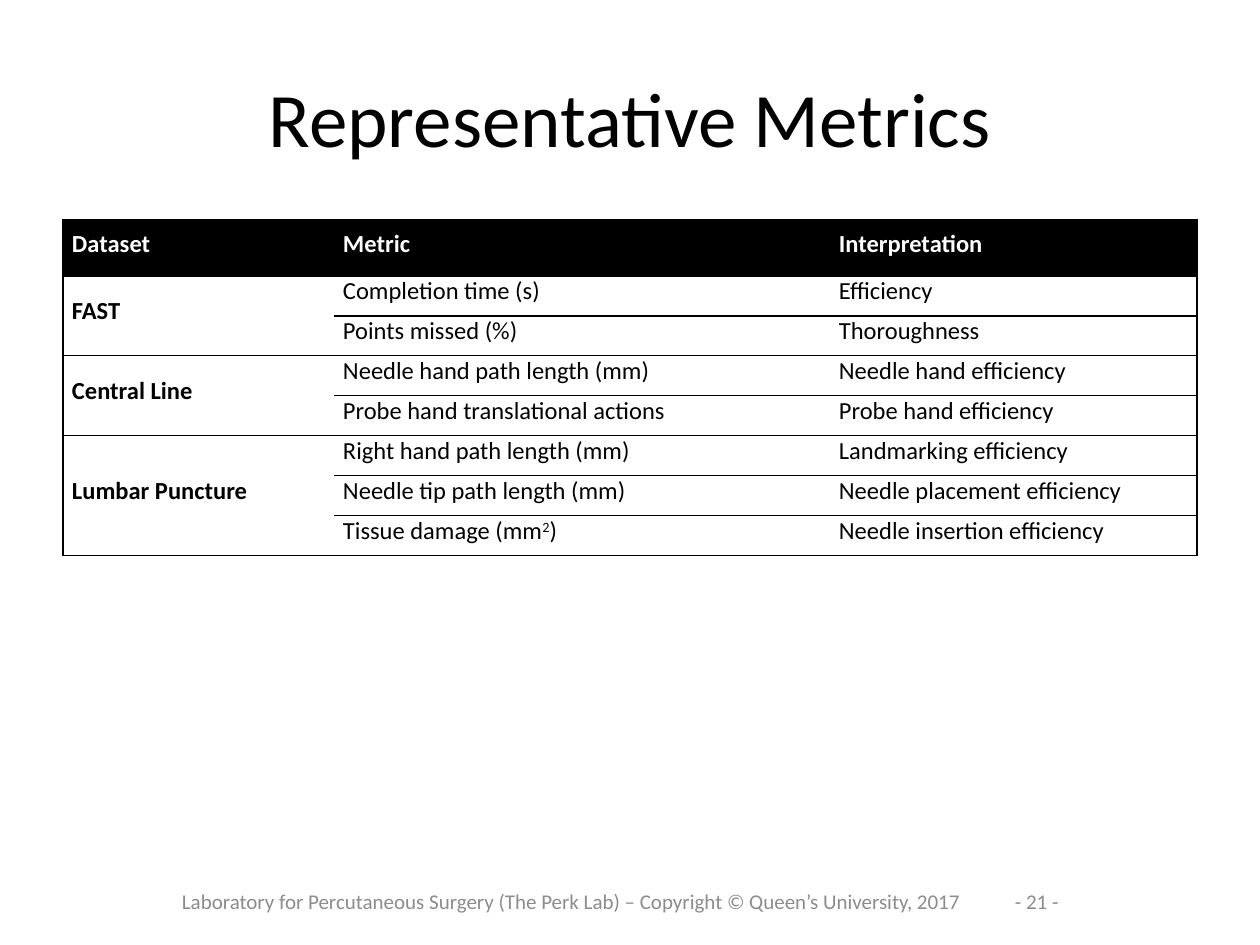
from dataclasses import dataclass

from pptx import Presentation
from pptx.dml.color import RGBColor
from pptx.enum.text import MSO_ANCHOR, PP_ALIGN
from pptx.oxml import parse_xml
from pptx.oxml.ns import nsdecls
from pptx.util import Emu, Pt


@dataclass(frozen=True)
class Theme:
    face: str = "Calibri"
    ink: str = "000000"
    paper: str = "FFFFFF"
    gray: str = "8C8C8C"
    title: int = 44
    body: int = 14
    small: int = 12
    rule: float = 0.75


THEME = Theme()
HEAD = ("Dataset", "Metric", "Interpretation")
GROUPS = {
    "FAST": [
        ("Completion time (s)", "Efficiency"),
        ("Points missed (%)", "Thoroughness"),
    ],
    "Central Line": [
        ("Needle hand path length (mm)", "Needle hand efficiency"),
        ("Probe hand translational actions", "Probe hand efficiency"),
    ],
    "Lumbar Puncture": [
        ("Right hand path length (mm)", "Landmarking efficiency"),
        ("Needle tip path length (mm)", "Needle placement efficiency"),
        ("Tissue damage (mm²)", "Needle insertion efficiency"),
    ],
}


def px(num):
    """Turn pixels into EMU."""
    return Emu(round(num * 914400 / 126))


def style(para, size, color, bold=False):
    """Format every run of a paragraph."""
    for run in para.runs:
        font = run.font
        font.name, font.size, font.bold = THEME.face, Pt(size), bold
        font.color.rgb = RGBColor.from_string(color)


def add_title(slide, text, box):
    """Place and format the title."""
    title = slide.shapes.title
    title.left, title.top, title.width, title.height = map(px, box)
    frame = title.text_frame
    frame.text = text
    frame.vertical_anchor = MSO_ANCHOR.MIDDLE
    para = frame.paragraphs[0]
    para.alignment = PP_ALIGN.CENTER
    style(para, THEME.title, THEME.ink)


def add_note(slide, text, box, align):
    """Add a small gray line of footer text."""
    frame = slide.shapes.add_textbox(*map(px, box)).text_frame
    frame.word_wrap = True
    frame.vertical_anchor = MSO_ANCHOR.MIDDLE
    frame.text = text
    para = frame.paragraphs[0]
    para.alignment = align
    style(para, THEME.small, THEME.gray)


def set_edges(cell, edges):
    """Draw the given sides of a cell and clear the others."""
    props = cell._tc.get_or_add_tcPr()
    for spot, side in enumerate("LRTB"):
        paint = (f'<a:solidFill><a:srgbClr val="{THEME.ink}"/></a:solidFill>'
                 if edges[side] else "<a:noFill/>")
        props.insert(spot, parse_xml(
            f'<a:ln{side} {nsdecls("a")} w="{Pt(THEME.rule)}">{paint}</a:ln{side}>'))


def fill_cell(cell, text, color, back, bold):
    """Write a cell, raising a squared sign."""
    cell.margin_left = cell.margin_right = px(9)
    cell.margin_top = cell.margin_bottom = 0
    cell.vertical_anchor = MSO_ANCHOR.MIDDLE
    cell.fill.solid()
    cell.fill.fore_color.rgb = RGBColor.from_string(back)
    para = cell.text_frame.paragraphs[0]
    para.line_spacing = Pt(12)
    start, power, end = text.partition("²")
    for part in filter(None, (start, power and "2", end)):
        para.add_run().text = part
    style(para, THEME.body, color, bold)
    if power:
        para.runs[1].font._element.set("baseline", "30000")


def add_grid(slide, left, top, cols, high, low):
    """Add the metrics table with merged dataset names."""
    rows = [HEAD]
    for name, items in GROUPS.items():
        rows += [(name if not i else "", *item) for i, item in enumerate(items)]
    count = len(rows)
    box = map(px, (left, top, sum(cols), high + low * (count - 1)))
    table = slide.shapes.add_table(count, len(cols), *box).table
    table.horz_banding = False
    for col, width in zip(table.columns, cols):
        col.width = px(width)
    for r, texts in enumerate(rows):
        table.rows[r].height = px(low if r else high)
        for c, text in enumerate(texts):
            cell = table.cell(r, c)
            color, back = ((THEME.ink, THEME.paper) if r
                           else (THEME.paper, THEME.ink))
            fill_cell(cell, text, color, back, not r or not c)
            ends = r + 1 == count or bool(rows[r + 1][c])
            set_edges(cell, {"L": c == 0, "R": c + 1 == len(cols),
                             "T": bool(text), "B": bool(text) or ends})
    row = 1
    for items in GROUPS.values():
        last = row + len(items) - 1
        table.cell(row, 0).merge(table.cell(last, 0))
        row = last + 1


def main():
    """Build the slide and save it."""
    deck = Presentation()
    deck.slide_width, deck.slide_height = px(1260), px(945)
    slide = deck.slides.add_slide(deck.slide_layouts[5])
    add_title(slide, "Representative Metrics", (63, 38, 1134, 157))
    add_note(slide, "Laboratory for Percutaneous Surgery (The Perk Lab) – "
             "Copyright © Queen’s University, 2017",
             (157, 876, 829, 50), PP_ALIGN.CENTER)
    add_note(slide, "- 21 -", (998, 876, 73, 50), PP_ALIGN.RIGHT)
    add_grid(slide, 63, 220, (271, 496, 367), 56, 40)
    deck.save("out.pptx")


if __name__ == "__main__":
    main()
